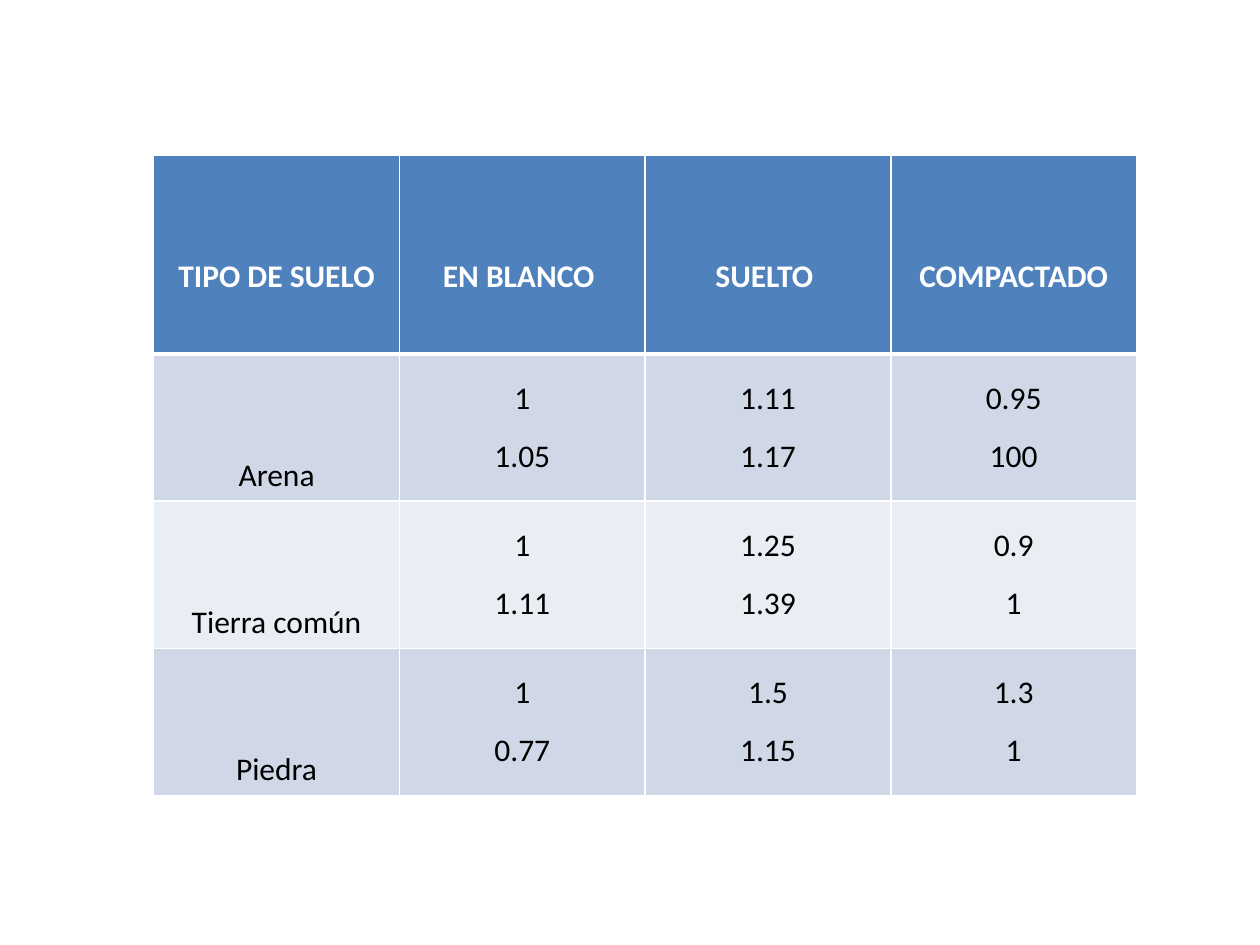
from pptx import Presentation
from pptx.dml.color import RGBColor as Rgb
from pptx.enum.text import PP_ALIGN as Align
from pptx.oxml.xmlchemy import OxmlElement as Element
from pptx.util import Inches, Pt

COLORS = {
    "header": "4F81BD",
    "odd": "D0D8E8",
    "even": "E9EDF4",
    "white": "FFFFFF",
    "black": "000000",
}
HEADINGS = ["TIPO DE SUELO", "EN BLANCO ", "SUELTO ", "COMPACTADO"]
SOILS = [
    ["Arena", "1\n1.05", "1.11\n1.17", "0.95\n100"],
    ["Tierra común", "1\n1.11", "1.25\n1.39", "0.9\n1"],
    ["Piedra", "1\n0.77", "1.5\n1.15", "1.3\n1"],
]


class SlideBuilder:
    font_name = "Calibri"
    font_size = Pt(18)

    def __init__(self, page):
        self.page = page

    def table(self, rows, left, top, column_width, row_heights, height):
        width = column_width * len(rows[0])
        frame = self.page.shapes.add_table(
            len(rows), len(rows[0]), left, top, width, height)
        for column in frame.table.columns:
            column.width = column_width
        for row, row_height in zip(frame.table.rows, row_heights):
            row.height = row_height
        frame.height = height
        for row_index, texts in enumerate(rows):
            for column_index, text in enumerate(texts):
                cell = frame.table.cell(row_index, column_index)
                self.cell(cell, text, row_index, column_index)

    def cell(self, cell, text, row_index, column_index):
        is_header = row_index == 0
        fill = "header" if is_header else "odd" if row_index % 2 else "even"
        cell.text = text
        for para in cell.text_frame.paragraphs:
            para.alignment = Align.CENTER
            para.line_spacing = 3.5 if is_header or column_index == 0 else 1.5
            para.font.name = self.font_name
            para.font.size = self.font_size
            para.font.bold = is_header
            para.font.color.rgb = Rgb.from_string(
                COLORS["white" if is_header else "black"])
        self.borders(cell, top=3 if row_index == 1 else 1,
                     bottom=3 if is_header else 1)
        cell.fill.solid()
        cell.fill.fore_color.rgb = Rgb.from_string(COLORS[fill])

    def borders(self, cell, top, bottom):
        properties = cell._tc.get_or_add_tcPr()
        for side, points in (("L", 1), ("R", 1), ("T", top), ("B", bottom)):
            line = Element(f"a:ln{side}")
            line.set("w", str(Pt(points)))
            solid = Element("a:solidFill")
            color = Element("a:srgbClr")
            color.set("val", COLORS["white"])
            solid.append(color)
            line.append(solid)
            properties.append(line)


def main():
    deck = Presentation()
    deck.slide_width = Inches(10)
    deck.slide_height = Inches(7.5)
    builder = SlideBuilder(deck.slides.add_slide(deck.slide_layouts[6]))
    builder.table(
        [HEADINGS] + SOILS,
        left=Inches(1.22),
        top=Inches(1.23),
        column_width=Inches(1.95),
        row_heights=[Inches(1.58)] + [Inches(0.92)] * len(SOILS),
        height=Inches(5.03),
    )
    deck.save("out.pptx")


if __name__ == "__main__":
    main()
